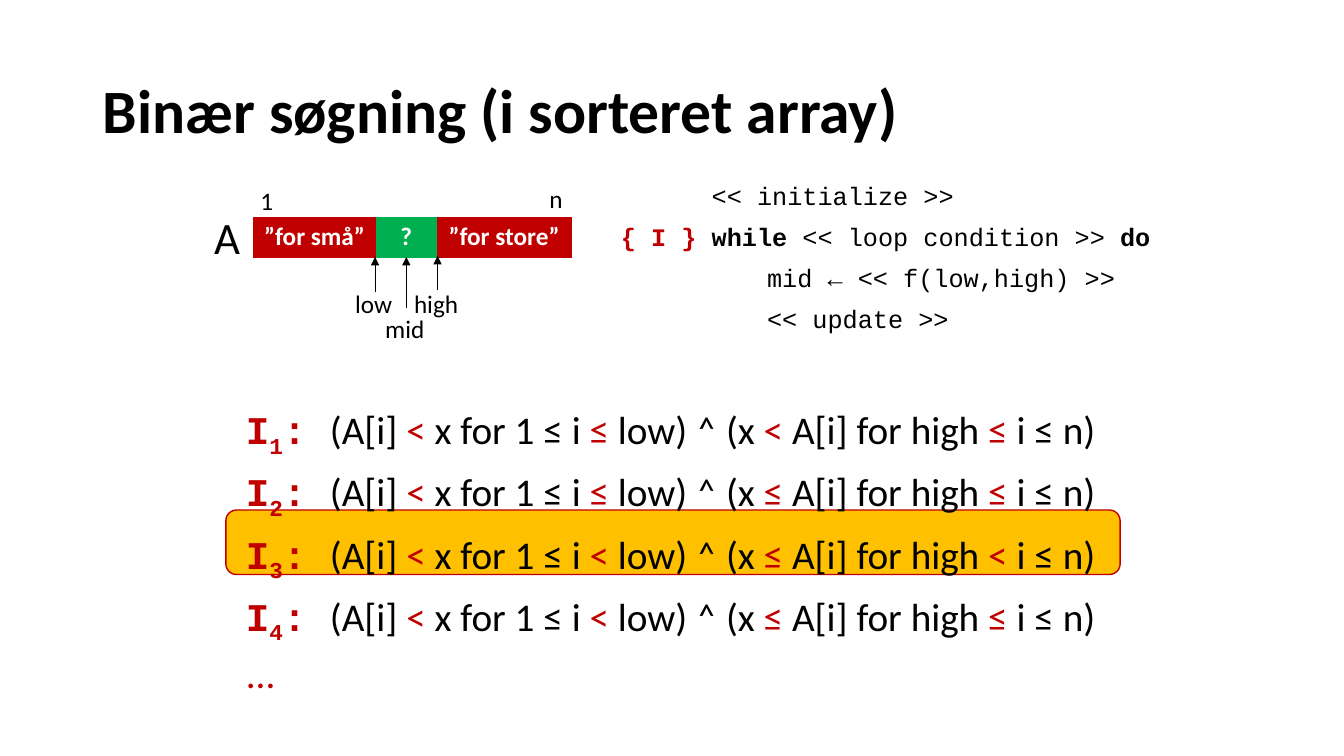
from dataclasses import dataclass

from lxml import etree
from pptx import Presentation
from pptx.dml.color import RGBColor
from pptx.enum.shapes import MSO_CONNECTOR, MSO_SHAPE
from pptx.enum.text import MSO_ANCHOR, MSO_AUTO_SIZE, PP_ALIGN
from pptx.oxml.ns import qn
from pptx.util import Pt

LEFT, CENTER, RIGHT = PP_ALIGN.LEFT, PP_ALIGN.CENTER, PP_ALIGN.RIGHT
MIDDLE = MSO_ANCHOR.MIDDLE
FIT_SHAPE, NO_FIT = MSO_AUTO_SIZE.SHAPE_TO_FIT_TEXT, MSO_AUTO_SIZE.NONE
STRAIGHT = MSO_CONNECTOR.STRAIGHT
ROUNDED = MSO_SHAPE.ROUNDED_RECTANGLE
EMU_PER_PX = 9144  # 100 px to the inch
PLAIN_TABLE = "{2D5ABB26-0587-4C30-8999-92F81FD0307C}"


@dataclass(frozen=True)
class Theme:
    black: RGBColor = RGBColor(0, 0, 0)
    white: RGBColor = RGBColor(255, 255, 255)
    red: RGBColor = RGBColor(0xC0, 0, 0)
    green: RGBColor = RGBColor(0, 0xB0, 0x50)
    amber: RGBColor = RGBColor(0xFF, 0xC0, 0)
    sans: str = "Calibri"
    mono: str = "Courier New"
    title: int = 44
    array_name: int = 32
    invariant: int = 28
    small: int = 18


T = Theme()

TITLE = "Binær søgning (i sorteret array)"

# text, width, fill
ARRAY_PARTS = [("”for små”", 122, T.red), ("?", 60, T.green), ("”for store”", 134, T.red)]
ARRAY_LEFT, ARRAY_TOP, ARRAY_HEIGHT = 251, 215, 41

# text, centre, top
INDEX_LABELS = [("low", 370, 281), ("high", 432, 281), ("mid", 401, 306),
                ("n", 551, 177), ("1", 264, 179)]
LABEL_WIDTH, LABEL_HEIGHT = 135, 40

# x, bottom, top
POINTERS = [(403, 306, 255), (372, 290, 255), (434, 288, 254)]

# indent, then runs of text, colour, bold
CODE = [
    (90, [("<< initialize >>", T.black, False)]),
    (0, [("{ I } ", T.red, True), ("while", T.black, True),
         (" << loop condition >> ", T.black, False), ("do", T.black, True)]),
    (145, [("mid ← << f(low,high) >>", T.black, False)]),
    (145, [("<< update >>", T.black, False)]),
]

# each invariant puts its own four comparisons between the same phrases
PHRASES = ["(A[i] ", "x for 1 ≤ i ", "low) ˄ (x ", "A[i] for high ", "i ≤ n)"]
COMPARISONS = ["<≤<≤", "<≤≤≤", "<<≤<", "<<≤≤"]
MORE = "..."


def px(length):
    return length * EMU_PER_PX


def box(left, top, width, height):
    return px(left), px(top), px(width), px(height)


def add_run(paragraph, text, size, color=T.black, bold=False, font=T.sans):
    run = paragraph.add_run()
    run.text = text
    run.font.size = Pt(size)
    run.font.name = font
    run.font.bold = bold
    run.font.color.rgb = color
    return run


def add_text_frame(slide, place, fit):
    frame = slide.shapes.add_textbox(*box(*place)).text_frame
    frame.word_wrap = True
    frame.auto_size = fit
    return frame


def add_label(slide, text, place, size, align):
    paragraph = add_text_frame(slide, place, FIT_SHAPE).paragraphs[0]
    paragraph.alignment = align
    add_run(paragraph, text, size)


def spaced_paragraphs(frame, count):
    """Return count paragraphs with the line spacing shared by code and invariants."""
    paragraphs = [frame.paragraphs[0]] + [frame.add_paragraph() for _ in range(count - 1)]
    for paragraph in paragraphs:
        paragraph.line_spacing = 0.9
        paragraph.space_before = Pt(10)
    return paragraphs


def add_title(slide):
    title = slide.shapes.title
    title.left, title.top, title.width, title.height = box(92, 40, 1150, 145)
    title.text_frame.vertical_anchor = MIDDLE
    paragraph = title.text_frame.paragraphs[0]
    paragraph.alignment = LEFT
    paragraph.line_spacing = 0.9
    add_run(paragraph, TITLE, T.title, bold=True)


def add_highlight(slide):
    highlight = slide.shapes.add_shape(ROUNDED, *box(224, 506, 887, 64))
    highlight.shadow.inherit = False
    highlight.fill.solid()
    highlight.fill.fore_color.rgb = T.amber
    highlight.line.color.rgb = T.red
    highlight.line.width = Pt(1)


def add_invariants(slide):
    frame = add_text_frame(slide, (234, 398, 874, 313), NO_FIT)
    *rows, last = spaced_paragraphs(frame, len(COMPARISONS) + 1)
    for number, (row, signs) in enumerate(zip(rows, COMPARISONS), 1):
        add_run(row, "I", T.invariant, T.red, True, T.mono)
        index = add_run(row, str(number), T.invariant, T.red, True, T.mono)
        index.font._element.set("baseline", "-25000")
        add_run(row, ": ", T.invariant, T.red, True, T.mono)
        for phrase, sign in zip(PHRASES, signs):
            add_run(row, phrase, T.invariant)
            add_run(row, sign + " ", T.invariant, T.red)
        add_run(row, PHRASES[-1], T.invariant)
    add_run(last, MORE, T.invariant, T.red)


def add_array(slide):
    width = sum(part_width for _, part_width, _ in ARRAY_PARTS)
    array = slide.shapes.add_table(
        1, len(ARRAY_PARTS), *box(ARRAY_LEFT, ARRAY_TOP, width, ARRAY_HEIGHT)).table
    array.first_row = array.horz_banding = False
    array._tbl.tblPr.find(qn("a:tableStyleId")).text = PLAIN_TABLE
    for column, (text, part_width, fill) in enumerate(ARRAY_PARTS):
        array.columns[column].width = px(part_width)
        cell = array.cell(0, column)
        cell.fill.solid()
        cell.fill.fore_color.rgb = fill
        paragraph = cell.text_frame.paragraphs[0]
        paragraph.alignment = CENTER
        add_run(paragraph, text, T.small, T.white, True)


def add_pointer(slide, x, bottom, top):
    pointer = slide.shapes.add_connector(STRAIGHT, px(x), px(bottom), px(x), px(top))
    pointer.line.color.rgb = T.black
    pointer.line.width = Pt(0.5)
    etree.SubElement(pointer.line._get_or_add_ln(), qn("a:tailEnd"), type="triangle")
    etree.SubElement(pointer._element.spPr, qn("a:effectLst"))


def add_code(slide):
    frame = add_text_frame(slide, (606, 177, 589, 161), NO_FIT)
    for line, (indent, runs) in zip(spaced_paragraphs(frame, len(CODE)), CODE):
        line._p.get_or_add_pPr().set("marL", str(px(indent)))
        for text, color, bold in runs:
            add_run(line, text, T.small, color, bold, T.mono)


def main():
    deck = Presentation()
    deck.slide_width, deck.slide_height = px(1333), px(750)
    slide = deck.slides.add_slide(deck.slide_layouts[5])
    add_title(slide)
    add_highlight(slide)
    add_invariants(slide)
    add_array(slide)
    for pointer in POINTERS:
        add_pointer(slide, *pointer)
    for text, centre, top in INDEX_LABELS:
        place = (centre - LABEL_WIDTH // 2, top, LABEL_WIDTH, LABEL_HEIGHT)
        add_label(slide, text, place, T.small, CENTER)
    add_label(slide, "A", (138, 203, 110, 64), T.array_name, RIGHT)
    add_code(slide)
    deck.save("out.pptx")


if __name__ == "__main__":
    main()
